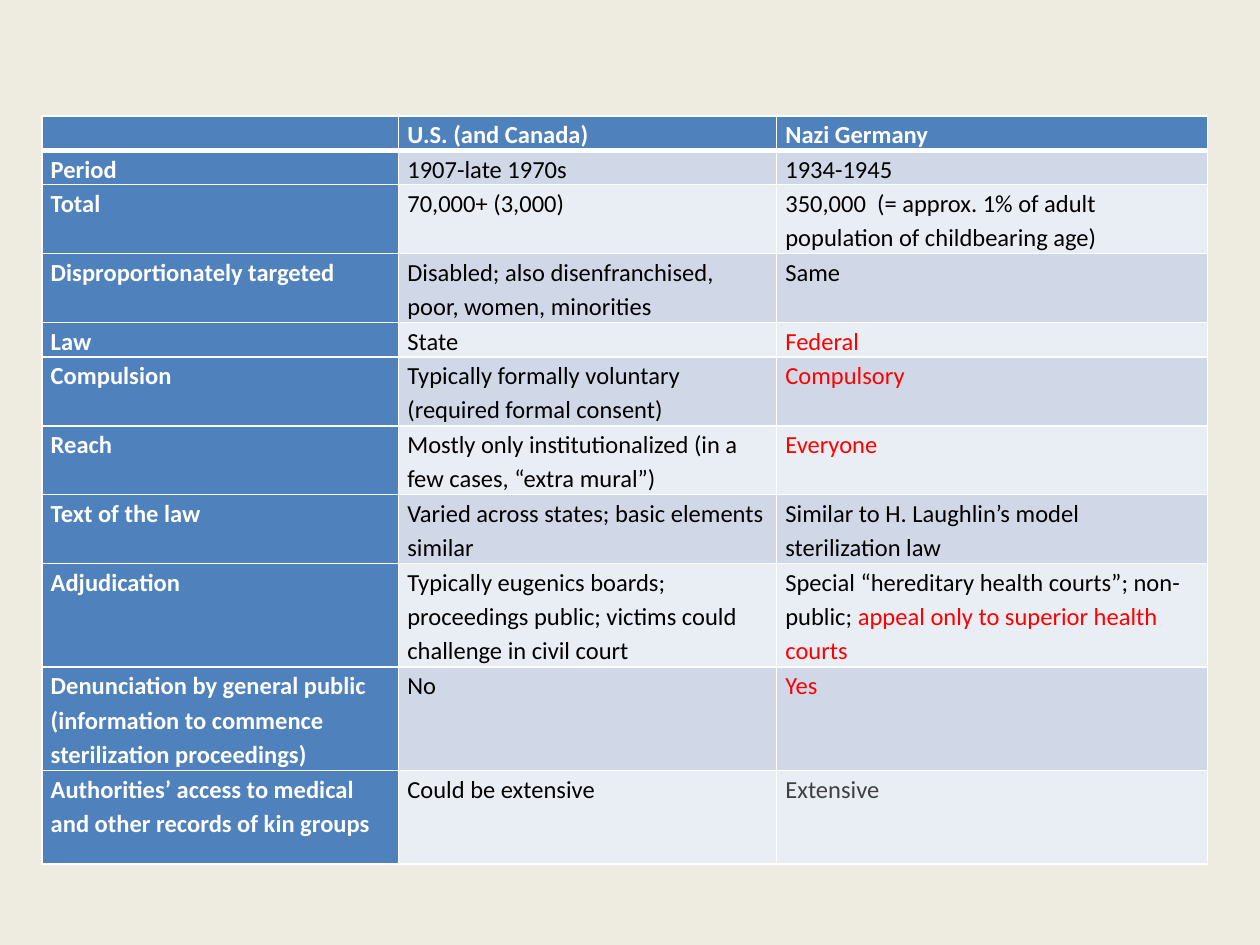
"""Build a slide comparing sterilization programmes in a three-column table."""
from lxml import etree
from pptx import Presentation
from pptx.dml.color import RGBColor
from pptx.oxml.ns import qn
from pptx.util import Pt

COLORS = {
    "background": "EEECE1",
    "label": "4F81BD",
    "odd": "D0D8E8",
    "even": "E9EDF4",
    "white": "FFFFFF",
    "black": "000000",
    "red": "FF0000",
    "gray": "404040",
}

# Each row: text line count, then cells; a cell is text or (text, color) runs.
HEADER = ["", "U.S. (and Canada)", "Nazi Germany"]
ROWS = [
    (1, ["Period", "1907-late 1970s", "1934-1945"]),
    (2, ["Total", "70,000+ (3,000)",
         "350,000  (= approx. 1% of adult population of childbearing age)"]),
    (2, ["Disproportionately targeted",
         "Disabled; also disenfranchised, poor, women, minorities", "Same"]),
    (1, ["Law", "State", [("Federal", "red")]]),
    (2, ["Compulsion", "Typically formally voluntary (required formal consent)",
         [("Compulsory", "red")]]),
    (2, ["Reach", "Mostly only institutionalized (in a few cases, “extra mural”)",
         [("Everyone", "red")]]),
    (2, ["Text of the law", "Varied across states; basic elements similar",
         "Similar to H. Laughlin’s model sterilization law"]),
    (3, ["Adjudication",
         "Typically eugenics boards; proceedings public; victims could challenge in civil court",
         [("Special “hereditary health courts”; non-public; ", "black"),
          ("appeal only to superior health courts", "red")]]),
    (3, ["Denunciation by general public (information to commence sterilization proceedings)",
         "No", [("Yes", "red")]]),
    (2.72, ["Authorities’ access to medical and other records of kin groups",
            "Could be extensive", [("Extensive", "gray")]]),
]

TABLE_LEFT, TABLE_TOP = 24, 66.2
COLUMN_WIDTHS = [203.8, 216, 246.2]
LINE_HEIGHT = 19.7
FONT_NAME, FONT_SIZE = "Calibri", 14
SIDE_MARGIN = 5
THIN, THICK = 1, 3


def rgb(name):
    return RGBColor.from_string(COLORS[name])


def set_borders(cell, top, bottom):
    properties = cell._tc.get_or_add_tcPr()
    widths = {"a:lnL": THIN, "a:lnR": THIN, "a:lnT": top, "a:lnB": bottom}
    for index, (tag, width) in enumerate(widths.items()):
        line = etree.Element(qn(tag), w=str(Pt(width)))
        fill = etree.SubElement(line, qn("a:solidFill"))
        etree.SubElement(fill, qn("a:srgbClr"), val=COLORS["white"])
        properties.insert(index, line)


def write_text(cell, content, color, bold):
    paragraph = cell.text_frame.paragraphs[0]
    paragraph.line_spacing = 1.15
    if not content:
        etree.SubElement(paragraph._p, qn("a:endParaRPr"), sz=str(FONT_SIZE * 100))
        return
    runs = [(content, color)] if isinstance(content, str) else content
    for words, run_color in runs:
        run = paragraph.add_run()
        run.text = words
        run.font.name = FONT_NAME
        run.font.size = Pt(FONT_SIZE)
        run.font.bold = bold
        run.font.color.rgb = rgb(run_color)


def fill_cell(cell, content, row, column):
    is_label = row == 0 or column == 0
    cell.margin_left = cell.margin_right = Pt(SIDE_MARGIN)
    cell.margin_top = cell.margin_bottom = 0
    cell.fill.solid()
    cell.fill.fore_color.rgb = rgb("label" if is_label else "odd" if row % 2 else "even")
    set_borders(cell, THICK if row == 1 else THIN, THICK if row == 0 else THIN)
    write_text(cell, content, "white" if is_label else "black", is_label)


def main():
    presentation = Presentation()
    presentation.slide_width, presentation.slide_height = Pt(720), Pt(540)
    slide = presentation.slides.add_slide(presentation.slide_layouts[6])
    slide.background.fill.solid()
    slide.background.fill.fore_color.rgb = rgb("background")

    rows = [(1, HEADER)] + ROWS
    heights = [lines * LINE_HEIGHT for lines, _ in rows]
    table = slide.shapes.add_table(
        len(rows), len(COLUMN_WIDTHS), Pt(TABLE_LEFT), Pt(TABLE_TOP),
        Pt(sum(COLUMN_WIDTHS)), Pt(sum(heights))).table
    for column, width in zip(table.columns, COLUMN_WIDTHS):
        column.width = Pt(width)
    for row, (height, (_, cells)) in enumerate(zip(heights, rows)):
        table.rows[row].height = Pt(height)
        for column, content in enumerate(cells):
            fill_cell(table.cell(row, column), content, row, column)

    presentation.save("out.pptx")


if __name__ == "__main__":
    main()
